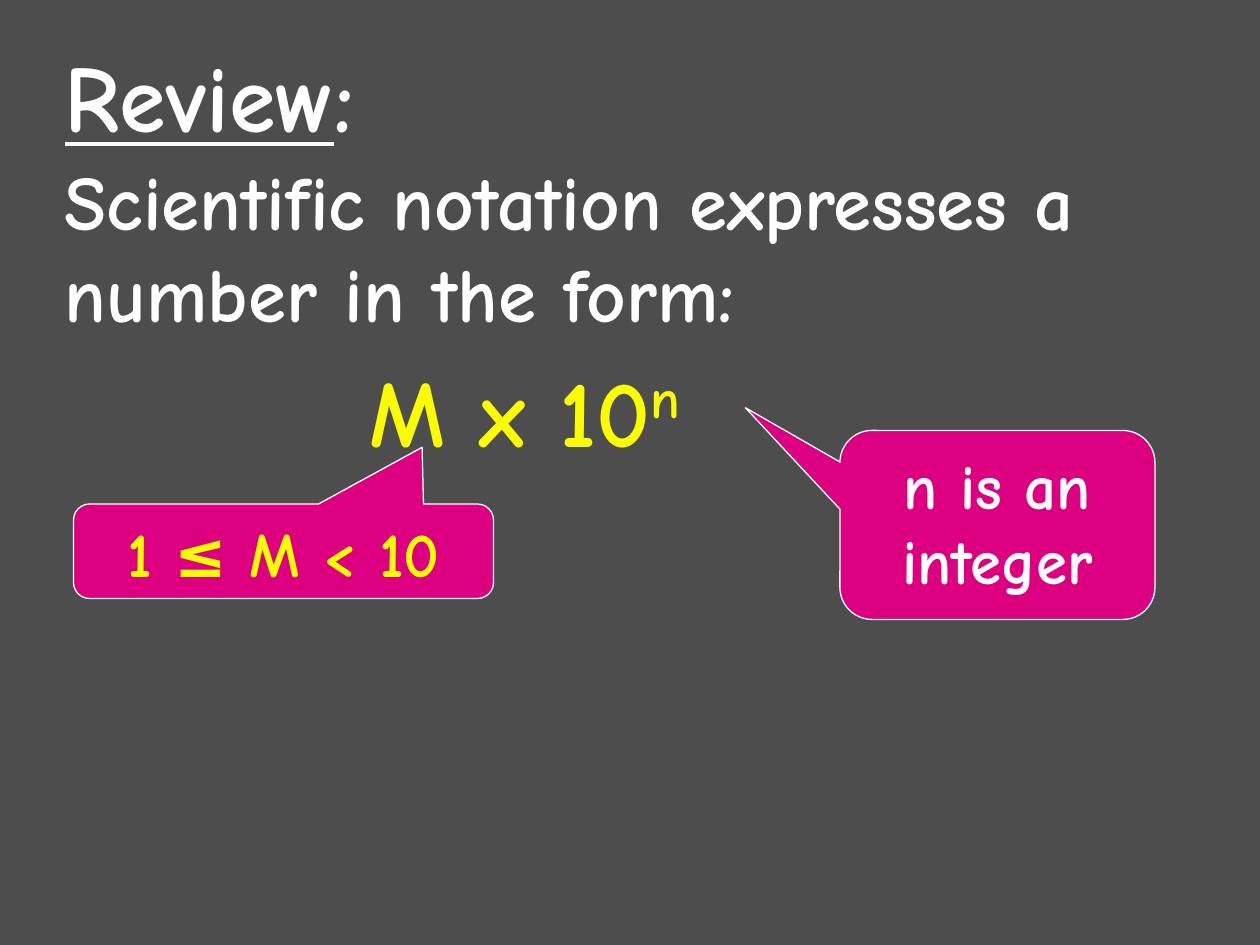
from pptx import Presentation, util as u
from pptx.dml.color import RGBColor
from pptx.enum import shapes, text

COLORS = {"background": "4D4D4D", "white": "FFFFFF", "yellow": "FAFD00", "pink": "DC0081"}
FONT = "Comic Neue"

TEXTS = [
    ((30, 18, 294, 72), 54, "white", [("Review", {"underline": True}), (":", {})]),
    ((30, 84, 690, 113), 44, "white",
     [("Scientific notation expresses a number in the form:", {})]),
    ((204, 198, 258, 72), 54, "yellow", [("M x 10", {}), ("n", {"superscript": 30})]),
]
CALLOUTS = [
    ((42, 288, 240, 54), "yellow", "1 ≤ M < 10", (0.33, -1.1, 0.17)),
    ((480, 246, 180, 108), "white", "n is an integer", (-0.8, -0.62, 0.17)),
]
CALLOUT_SIZE = 36


def rgb(name):
    return RGBColor.from_string(COLORS[name])


def points(values):
    return [u.Pt(value) for value in values]


def write(shape, runs, size, color, alignment):
    frame = shape.text_frame
    for name, value in {"word_wrap": True, "vertical_anchor": text.MSO_ANCHOR.TOP}.items():
        setattr(frame, name, value)
    paragraph = frame.paragraphs[0]
    paragraph.alignment = alignment
    for wording, extras in runs:
        run = paragraph.add_run()
        run.text = wording
        formats = {"name": FONT, "size": u.Pt(size), "bold": True, **extras}
        raised = formats.pop("superscript", None)
        for name, value in formats.items():
            setattr(run.font, name, value)
        run.font.color.rgb = rgb(color)
        if raised:
            run._r.get_or_add_rPr().set("baseline", str(raised * 1000))


def add_callout(slide, box, color, wording, adjustments):
    shape = slide.shapes.add_shape(
        shapes.MSO_SHAPE.ROUNDED_RECTANGULAR_CALLOUT, *points(box))
    for index, value in enumerate(adjustments):
        shape.adjustments[index] = value
    shape.shadow.inherit = False
    shape.fill.solid()
    shape.fill.fore_color.rgb = rgb("pink")
    shape.line.color.rgb = rgb("white")
    shape.line.width = u.Pt(0.75)
    write(shape, [(wording, {})], CALLOUT_SIZE, color, text.PP_ALIGN.CENTER)


def main():
    presentation = Presentation()
    presentation.slide_width, presentation.slide_height = points((720, 540))
    slide = presentation.slides.add_slide(presentation.slide_layouts[6])
    slide.background.fill.solid()
    slide.background.fill.fore_color.rgb = rgb("background")
    for box, size, color, runs in TEXTS:
        write(slide.shapes.add_textbox(*points(box)), runs, size, color, text.PP_ALIGN.LEFT)
    for callout in CALLOUTS:
        add_callout(slide, *callout)
    presentation.save("out.pptx")


if __name__ == "__main__":
    main()
